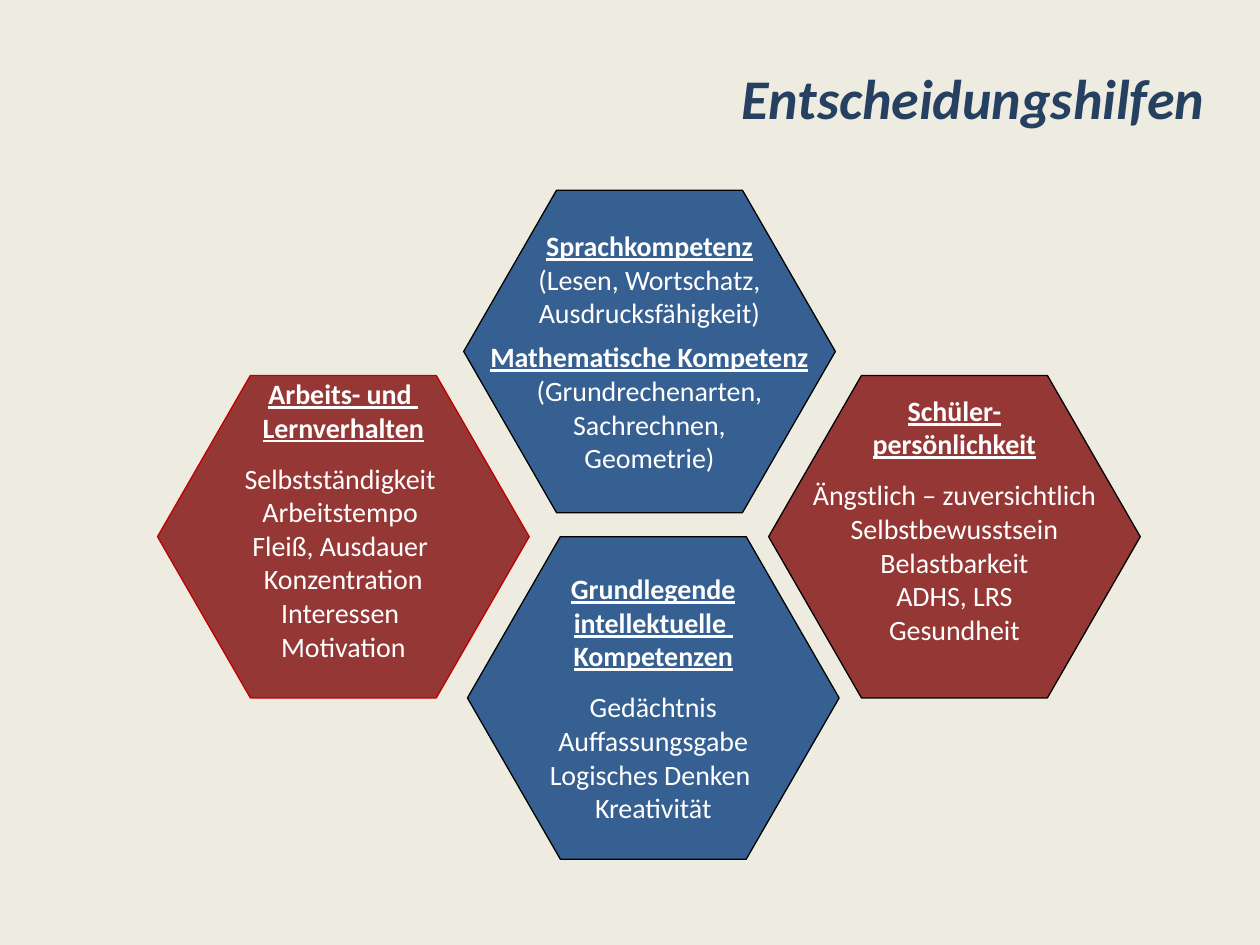
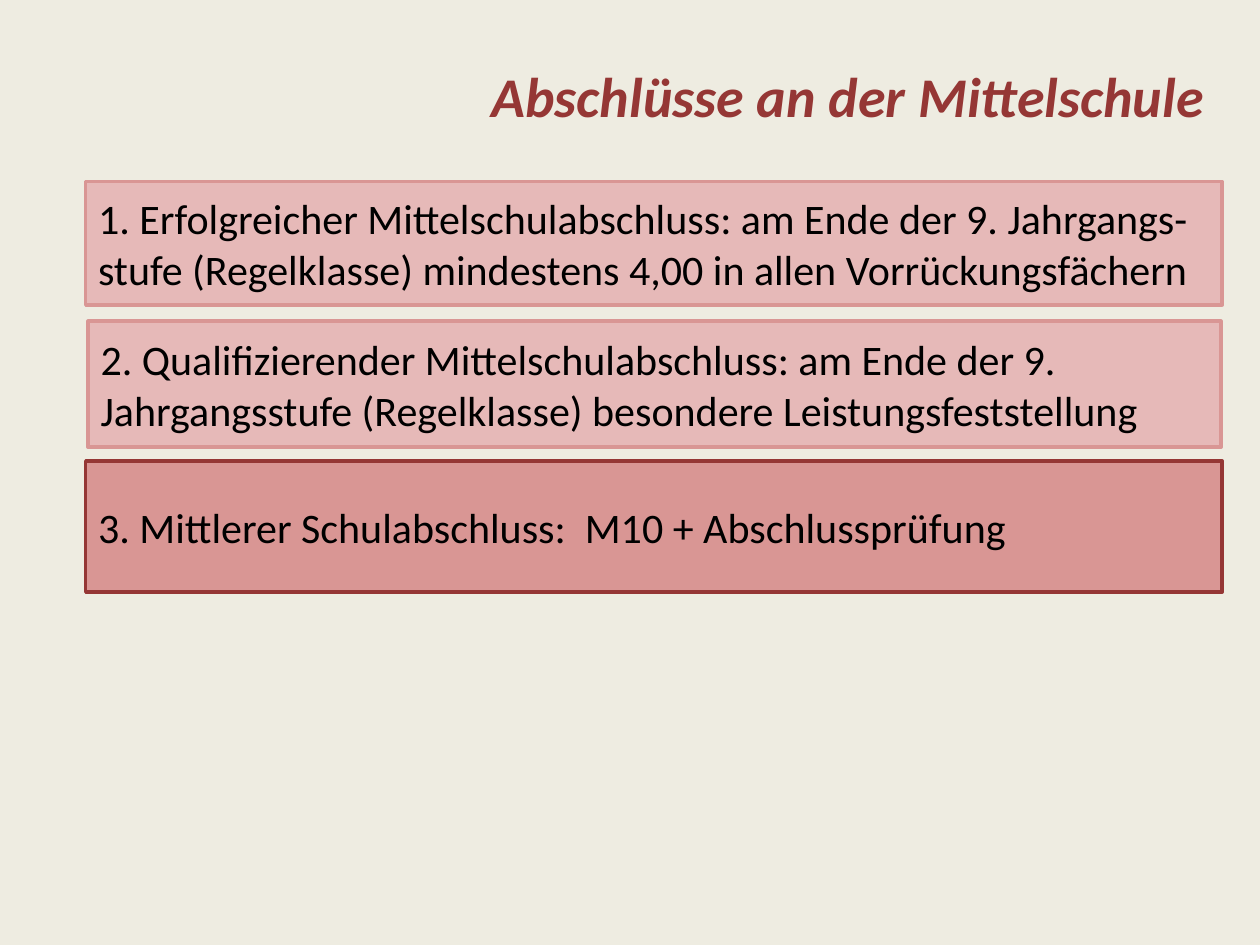
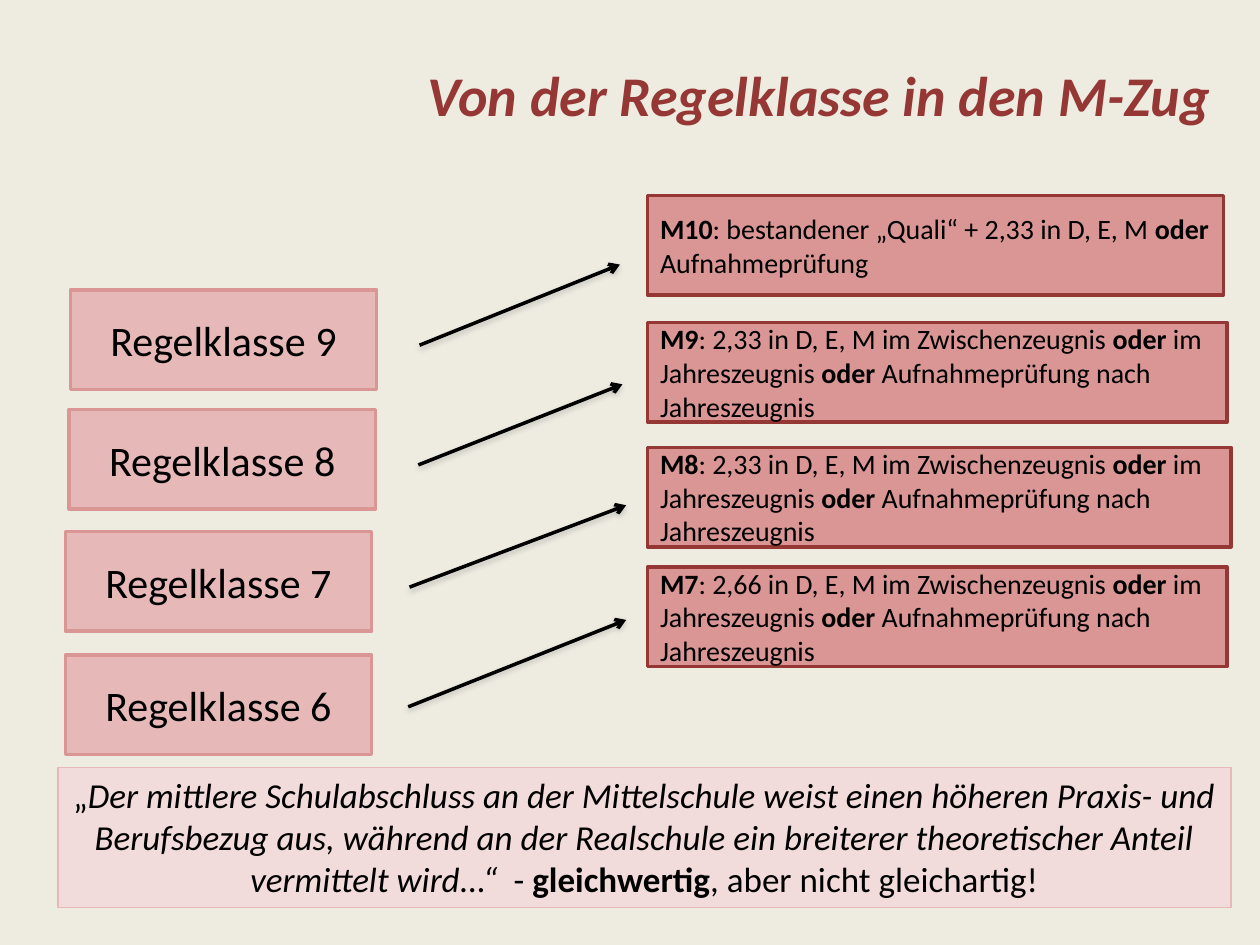
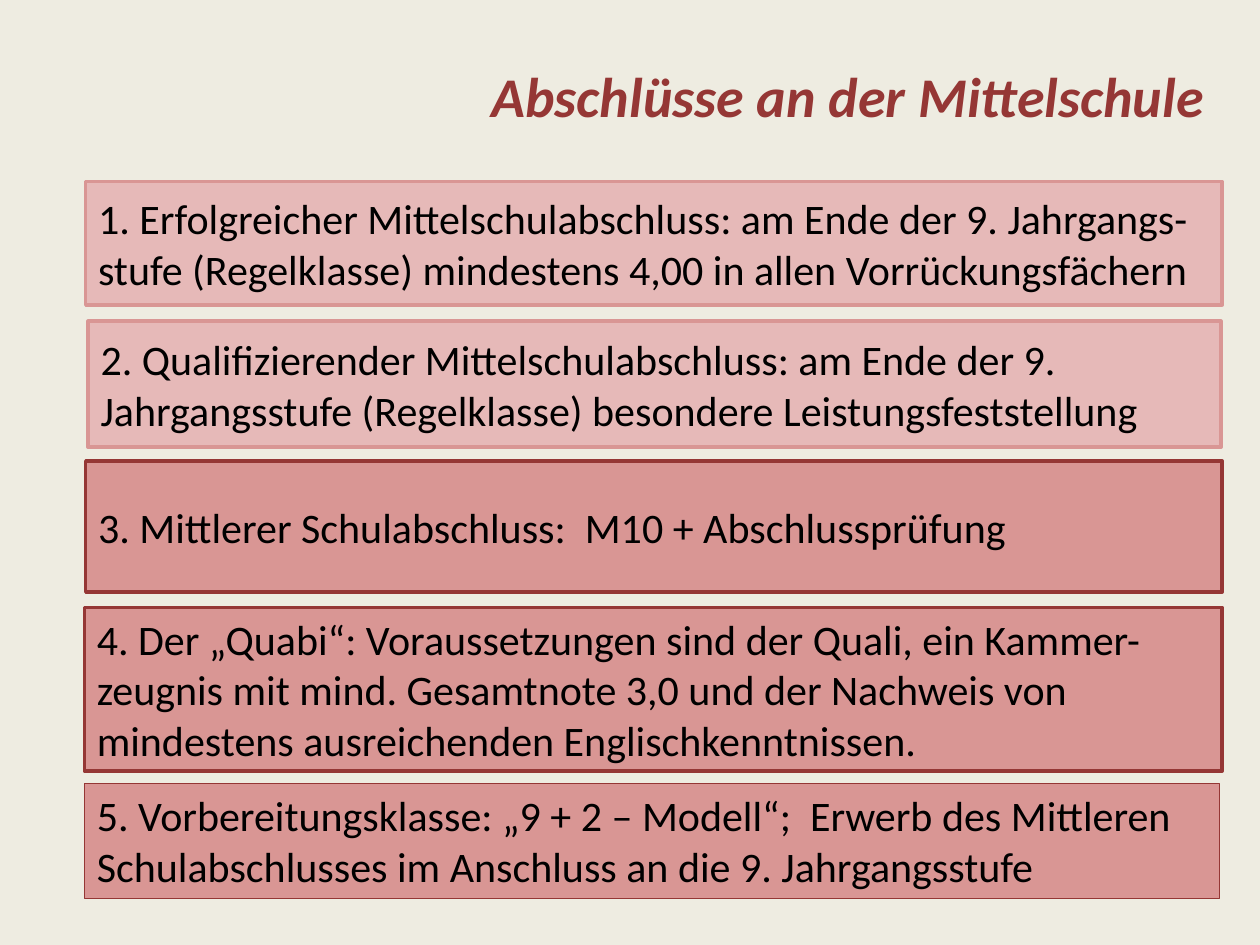
"""Build four slides about choosing a school path and the Mittelschule certificates."""

from dataclasses import dataclass
from typing import NamedTuple, Sequence

from lxml.etree import SubElement
from pptx import Presentation
from pptx.dml.color import RGBColor
from pptx.enum.shapes import MSO_CONNECTOR, MSO_SHAPE
from pptx.enum.text import MSO_ANCHOR, MSO_AUTO_SIZE, PP_ALIGN
from pptx.oxml.ns import qn
from pptx.slide import Slide
from pptx.util import Emu, Pt

PX = 9144
FONT = "Calibri"

CREAM = RGBColor(0xEE, 0xEC, 0xE1)
NAVY = RGBColor(0x25, 0x40, 0x61)
BLUE = RGBColor(0x37, 0x60, 0x92)
DARK_RED = RGBColor(0x95, 0x37, 0x35)
BRIGHT_RED = RGBColor(0xC0, 0x00, 0x00)
ROSE = RGBColor(0xD9, 0x96, 0x94)
LIGHT_ROSE = RGBColor(0xE6, 0xB9, 0xB8)
PALE_ROSE = RGBColor(0xF2, 0xDC, 0xDB)
BLACK = RGBColor(0x00, 0x00, 0x00)
WHITE = RGBColor(0xFF, 0xFF, 0xFF)

HEXAGON_WIDTH, HEXAGON_HEIGHT = 295, 256
HEXAGON_INDENT = 0.288
INSET = 5
CLASS_WIDTH, CLASS_HEIGHT = 243, 79
M_CLASS_LEFT = 514


class Frame(NamedTuple):
    left: int
    top: int
    width: int
    height: int


class Style(NamedTuple):
    fill: RGBColor
    line: RGBColor
    weight: float = 2


class Span(NamedTuple):
    text: str
    bold: bool = False
    italic: bool = False


class Block(NamedTuple):
    lines: Sequence[str]
    heading: bool = False
    space_before: int = 0


class Arrow(NamedTuple):
    start_x: int
    start_y: int
    end_x: int
    end_y: int


@dataclass(frozen=True)
class Hexagon:
    left: int
    top: int
    style: Style
    blocks: Sequence[Block]
    lift: int = 0


@dataclass(frozen=True)
class Panel:
    frame: Frame
    style: Style
    spans: Sequence[Span]
    size: int = 24
    align: PP_ALIGN = PP_ALIGN.LEFT
    grows: bool = False


REGULAR = Style(LIGHT_ROSE, ROSE)
ADVANCED = Style(ROSE, DARK_RED)
BLUE_HEXAGON = Style(BLUE, BLACK, 0.75)

HEXAGONS = (
    Hexagon(368, 151, BLUE_HEXAGON, (
        Block(("Sprachkompetenz",), heading=True),
        Block(("(Lesen, Wortschatz,", "Ausdrucksfähigkeit)")),
        Block(("Mathematische Kompetenz",), heading=True, space_before=6),
        Block(("(Grundrechenarten,", "Sachrechnen,", "Geometrie)")),
    )),
    Hexagon(371, 426, BLUE_HEXAGON, (
        Block(("Grundlegende", "intellektuelle ", "Kompetenzen"), heading=True),
        Block(("Gedächtnis", "Auffassungsgabe", "Logisches Denken ", "Kreativität"), space_before=10),
    )),
    Hexagon(125, 298, Style(DARK_RED, BRIGHT_RED, 0.75), (
        Block(("Arbeits- und ", "Lernverhalten"), heading=True),
        Block(("Selbstständigkeit ", "Arbeitstempo ", "Fleiß, Ausdauer ",
               "Konzentration", "Interessen ", "Motivation"), space_before=10),
    ), lift=27),
    Hexagon(610, 298, Style(DARK_RED, BLACK, 0.75), (
        Block(("Schüler-", "persönlichkeit"), heading=True),
        Block(("Ängstlich – zuversichtlich", "Selbstbewusstsein", "Belastbarkeit",
               "ADHS, LRS", "Gesundheit"), space_before=10),
    ), lift=27),
)

CERTIFICATES = (
    Panel(Frame(68, 144, 902, 98), REGULAR, (Span(
        "1. Erfolgreicher Mittelschulabschluss: am Ende der 9. Jahrgangs-stufe "
        "(Regelklasse) mindestens 4,00 in allen Vorrückungsfächern"),)),
    Panel(Frame(70, 255, 899, 100), REGULAR, (Span(
        "2. Qualifizierender Mittelschulabschluss: am Ende der 9. Jahrgangsstufe "
        "(Regelklasse) besondere Leistungsfeststellung"),)),
    Panel(Frame(68, 366, 902, 104), ADVANCED, (Span(
        "3. Mittlerer Schulabschluss:  M10 + Abschlussprüfung"),)),
    Panel(Frame(67, 482, 903, 130), ADVANCED, (Span(
        "4. Der „Quabi“: Voraussetzungen sind der Quali, ein Kammer-zeugnis mit mind. "
        "Gesamtnote 3,0 und der Nachweis von mindestens ausreichenden Englischkenntnissen."),)),
    Panel(Frame(67, 622, 901, 91), Style(ROSE, DARK_RED, 0.75), (Span(
        "5. Vorbereitungsklasse: „9 + 2 – Modell“;  Erwerb des Mittleren "
        "Schulabschlusses im Anschluss an die 9. Jahrgangsstufe"),), grows=True),
)


def report_spans(name: str, grade: str) -> Sequence[Span]:
    """Give the entry rule of an M class that accepts two school reports."""
    return (
        Span(name, bold=True),
        Span(f": {grade} in D, E, M im Zwischenzeugnis "),
        Span("oder", bold=True),
        Span(" im Jahreszeugnis "),
        Span("oder", bold=True),
        Span(" Aufnahmeprüfung nach Jahreszeugnis"),
    )


M10_SPANS = (
    Span("M10", bold=True),
    Span(": bestandener „Quali“ + 2,33 in D, E, M "),
    Span("oder", bold=True),
    Span(" Aufnahmeprüfung"),
)
REGULAR_CLASSES = ((6, 52, 520), (7, 52, 422), (8, 55, 325), (9, 56, 230))
M_CLASSES = (
    (450, 460, report_spans("M7", "2,66")),
    (355, 463, report_spans("M8", "2,33")),
    (256, 460, report_spans("M9", "2,33")),
    (155, 457, M10_SPANS),
)
ARROWS = (
    Arrow(324, 561, 497, 492),
    Arrow(325, 466, 497, 401),
    Arrow(332, 369, 494, 305),
    Arrow(333, 274, 492, 210),
)
QUOTE = Panel(Frame(46, 609, 931, 111), Style(PALE_ROSE, LIGHT_ROSE, 0.75), (
    Span("„"),
    Span("Der mittlere Schulabschluss an der Mittelschule weist einen höheren Praxis- und "
         "Berufsbezug aus, während an der Realschule ein breiterer theoretischer Anteil "
         "vermittelt wird...“", italic=True),
    Span("  - "),
    Span("gleichwertig", bold=True),
    Span(", aber nicht gleichartig!"),
), size=20, align=PP_ALIGN.CENTER, grows=True)


def px(*lengths: int) -> list[Emu]:
    """Turn px lengths into EMU."""
    return [Emu(length * PX) for length in lengths]


def set_font(para, size: int, color: RGBColor) -> None:
    """Set the typeface, size and colour of a paragraph."""
    para.font.name = FONT
    para.font.size = Pt(size)
    para.font.color.rgb = color


def add_page(deck, title: str, frame: Frame, color: RGBColor = DARK_RED) -> Slide:
    """Add a cream page with a right-aligned title."""
    page = deck.slides.add_slide(deck.slide_layouts[6])
    page.background.fill.solid()
    page.background.fill.fore_color.rgb = CREAM
    text = page.shapes.add_textbox(*px(*frame)).text_frame
    text.word_wrap = True
    text.vertical_anchor = MSO_ANCHOR.MIDDLE
    para = text.paragraphs[0]
    para.text = title
    para.alignment = PP_ALIGN.RIGHT
    set_font(para, 32, color)
    para.font.bold = para.font.italic = True
    return page


def add_box(page: Slide, preset: MSO_SHAPE, frame: Frame, style: Style):
    """Add a filled and outlined preset shape without shadow."""
    box = page.shapes.add_shape(preset, *px(*frame))
    box.shadow.inherit = False
    box.fill.solid()
    box.fill.fore_color.rgb = style.fill
    box.line.color.rgb = style.line
    box.line.width = Pt(style.weight)
    box.text_frame.vertical_anchor = MSO_ANCHOR.MIDDLE
    return box


def add_hexagon(page: Slide, hexagon: Hexagon) -> None:
    """Add a hexagon with underlined headings and plain lines."""
    frame = Frame(hexagon.left, hexagon.top, HEXAGON_WIDTH, HEXAGON_HEIGHT)
    box = add_box(page, MSO_SHAPE.HEXAGON, frame, hexagon.style)
    box.adjustments[0] = HEXAGON_INDENT
    text = box.text_frame
    text.word_wrap = False
    text.margin_bottom = px(INSET + hexagon.lift)[0]
    rows = [(line, block, index) for block in hexagon.blocks
            for index, line in enumerate(block.lines)]
    for number, (line, block, index) in enumerate(rows):
        para = text.add_paragraph() if number else text.paragraphs[0]
        para.text = line
        para.alignment = PP_ALIGN.CENTER
        if index == 0 and block.space_before:
            para.space_before = Pt(block.space_before)
        set_font(para, 16, WHITE)
        para.font.bold = para.font.underline = block.heading


def add_panel(page: Slide, panel: Panel) -> None:
    """Add a rectangle with one paragraph of text."""
    text = add_box(page, MSO_SHAPE.RECTANGLE, panel.frame, panel.style).text_frame
    text.word_wrap = True
    if panel.grows:
        text.vertical_anchor = MSO_ANCHOR.TOP
        text.auto_size = MSO_AUTO_SIZE.SHAPE_TO_FIT_TEXT
    para = text.paragraphs[0]
    para.alignment = panel.align
    set_font(para, panel.size, BLACK)
    for part in panel.spans:
        span = para.add_run()
        span.text = part.text
        if part.bold:
            span.font.bold = True
        if part.italic:
            span.font.italic = True


def add_arrow(page: Slide, arrow: Arrow) -> None:
    """Add a black arrow with a soft grey shadow below it."""
    connector = page.shapes.add_connector(MSO_CONNECTOR.STRAIGHT, *px(*arrow))
    connector.line.color.rgb = BLACK
    connector.line.width = Pt(2)
    properties = connector.element.spPr
    SubElement(properties.find(qn("a:ln")), qn("a:tailEnd"), type="arrow")
    effects = SubElement(properties, qn("a:effectLst"))
    shadow = SubElement(effects, qn("a:outerShdw"), blurRad="40000", dist="20000",
                        dir="5400000", rotWithShape="0")
    color = SubElement(shadow, qn("a:srgbClr"), val="808080")
    SubElement(color, qn("a:alpha"), val="38000")


def add_decision_page(deck) -> None:
    """Add the page with the four groups of decision aids."""
    page = add_page(deck, "Entscheidungshilfen", Frame(254, 46, 712, 63), NAVY)
    for hexagon in HEXAGONS:
        add_hexagon(page, hexagon)


def add_certificate_page(deck, count: int) -> None:
    """Add the page that lists the first certificates."""
    page = add_page(deck, "Abschlüsse an der Mittelschule", Frame(225, 42, 741, 67))
    for panel in CERTIFICATES[:count]:
        add_panel(page, panel)


def add_transfer_page(deck) -> None:
    """Add the page that leads from regular classes to M classes."""
    page = add_page(deck, "Von der Regelklasse in den M-Zug", Frame(189, 30, 782, 90))
    for grade, left, top in REGULAR_CLASSES:
        add_panel(page, Panel(Frame(left, top, CLASS_WIDTH, CLASS_HEIGHT), REGULAR,
                              (Span(f"Regelklasse {grade}"),), align=PP_ALIGN.CENTER))
    for top, width, spans in M_CLASSES:
        add_panel(page, Panel(Frame(M_CLASS_LEFT, top, width, CLASS_HEIGHT), ADVANCED,
                              spans, size=16))
    add_panel(page, QUOTE)
    for arrow in ARROWS:
        add_arrow(page, arrow)


def main() -> None:
    """Build and save the deck."""
    deck = Presentation()
    deck.slide_width, deck.slide_height = px(1000, 750)
    add_decision_page(deck)
    add_certificate_page(deck, 3)
    add_transfer_page(deck)
    add_certificate_page(deck, 5)
    deck.save("out.pptx")


if __name__ == "__main__":
    main()
